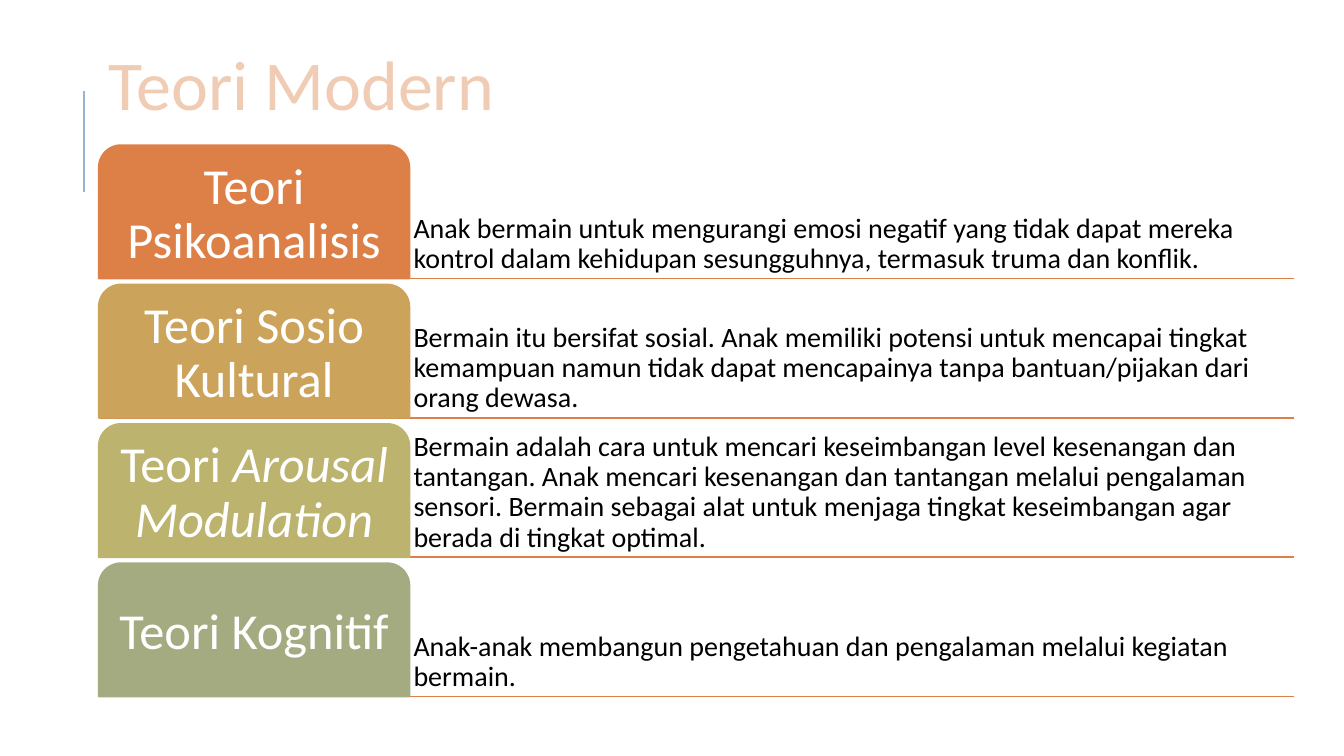
from pptx import Presentation
from pptx.dml.color import RGBColor
from pptx.enum.shapes import MSO_CONNECTOR as Connector, MSO_SHAPE as Shape
from pptx.enum.text import MSO_ANCHOR as Anchor, PP_ALIGN as Align
from pptx.oxml.ns import qn
from pptx.util import Inches, Pt
from lxml.etree import SubElement

FONT = "Calibri"
BLACK = RGBColor(0x00, 0x00, 0x00)
WHITE = RGBColor(0xFF, 0xFF, 0xFF)
PEACH = RGBColor(0xF1, 0xCC, 0xB5)
BLUE = RGBColor(0x94, 0xB6, 0xD2)
ORANGE = RGBColor(0xDD, 0x80, 0x47)
GOLD = RGBColor(0xCC, 0xA3, 0x5B)
OLIVE = RGBColor(0xBB, 0xB3, 0x6E)
SAGE = RGBColor(0xA5, 0xAB, 0x81)

THEORIES = [
    ("Teori Psikoanalisis", "", ORANGE,
     "Anak bermain untuk mengurangi emosi negatif yang tidak dapat mereka "
     "kontrol dalam kehidupan sesungguhnya, termasuk truma dan konflik."),
    ("Teori Sosio Kultural", "", GOLD,
     "Bermain itu bersifat sosial. Anak memiliki potensi untuk mencapai tingkat "
     "kemampuan namun tidak dapat mencapainya tanpa bantuan/pijakan dari orang dewasa."),
    ("Teori ", "Arousal Modulation", OLIVE,
     "Bermain adalah cara untuk mencari keseimbangan level kesenangan dan tantangan. "
     "Anak mencari kesenangan dan tantangan melalui pengalaman sensori. Bermain sebagai "
     "alat untuk menjaga tingkat keseimbangan agar berada di tingkat optimal."),
    ("Teori Kognitif", "", SAGE,
     "Anak-anak membangun pengetahuan dan pengalaman melalui kegiatan bermain."),
]


def write_text(holder, text, *, size, color, italic_tail="", anchor=Anchor.MIDDLE,
               align=Align.LEFT, spacing=0.9, inset=0.04):
    """Write one formatted paragraph, with an optional italic ending."""
    frame = holder.text_frame
    frame.word_wrap = True
    frame.vertical_anchor = anchor
    frame.margin_left = frame.margin_right = Inches(inset)
    frame.margin_top = frame.margin_bottom = Inches(inset)
    paragraph = frame.paragraphs[0]
    paragraph.alignment = align
    paragraph.line_spacing = spacing
    for words, italic in ((text, False), (italic_tail, True)):
        if words:
            run = paragraph.add_run()
            run.text = words
            run.font.name = FONT
            run.font.size = Pt(size)
            run.font.italic = italic
            run.font.color.rgb = color


def add_rule(slide, start, end, color, weight):
    """Draw a straight line between two points given in inches."""
    rule = slide.shapes.add_connector(
        Connector.STRAIGHT, *(Inches(length) for length in (*start, *end)))
    rule.line.color.rgb = color
    rule.line.width = Pt(weight)
    SubElement(rule._element.spPr, qn("a:effectLst"))


def add_heading(slide, left, top, width, height):
    """Place the title and the accent line to its left."""
    add_rule(slide, (left - 0.15, top + 1.46), (left - 0.15, top + 0.46), BLUE, 1.5)
    title = slide.shapes.add_textbox(*map(Inches, (left, top, width, height)))
    write_text(title, "Teori Modern", size=50, color=PEACH, spacing=0.8, inset=0.1)


def add_theory(slide, theory, left, top, width, height):
    """Place one theory: underline, description and coloured tab."""
    name, italic_name, color, explanation = theory
    tab_width = width * 0.26
    bottom = top + height
    add_rule(slide, (left, bottom), (left + width, bottom), ORANGE, 1.25)

    description = slide.shapes.add_textbox(
        *map(Inches, (left + tab_width, top, width - tab_width, height)))
    write_text(description, explanation, size=20, color=BLACK, anchor=Anchor.BOTTOM)

    tab = slide.shapes.add_shape(
        Shape.ROUND_2_SAME_RECTANGLE, *map(Inches, (left, top, tab_width, height)))
    tab.shadow.inherit = False
    tab.fill.solid()
    tab.fill.fore_color.rgb = color
    tab.line.color.rgb = color
    tab.line.width = Pt(1.25)
    write_text(tab, name, italic_tail=italic_name, size=36, color=WHITE,
               align=Align.CENTER, inset=0.07)


def add_theory_list(slide, left, top, width, height, gap=0.06):
    """Stack the theories in equal rows inside the box."""
    row_height = (height + gap) / len(THEORIES) - gap
    for index, theory in enumerate(THEORIES):
        add_theory(slide, theory, left, top + index * (row_height + gap), width, row_height)


def main():
    """Build and save the slide."""
    deck = Presentation()
    deck.slide_width, deck.slide_height = Inches(13.33), Inches(7.5)
    slide = deck.slides.add_slide(deck.slide_layouts[6])
    add_heading(slide, 0.98, 0.44, 10.63, 0.92)
    add_theory_list(slide, 0.98, 1.44, 11.85, 5.47)
    deck.save("out.pptx")


if __name__ == "__main__":
    main()
